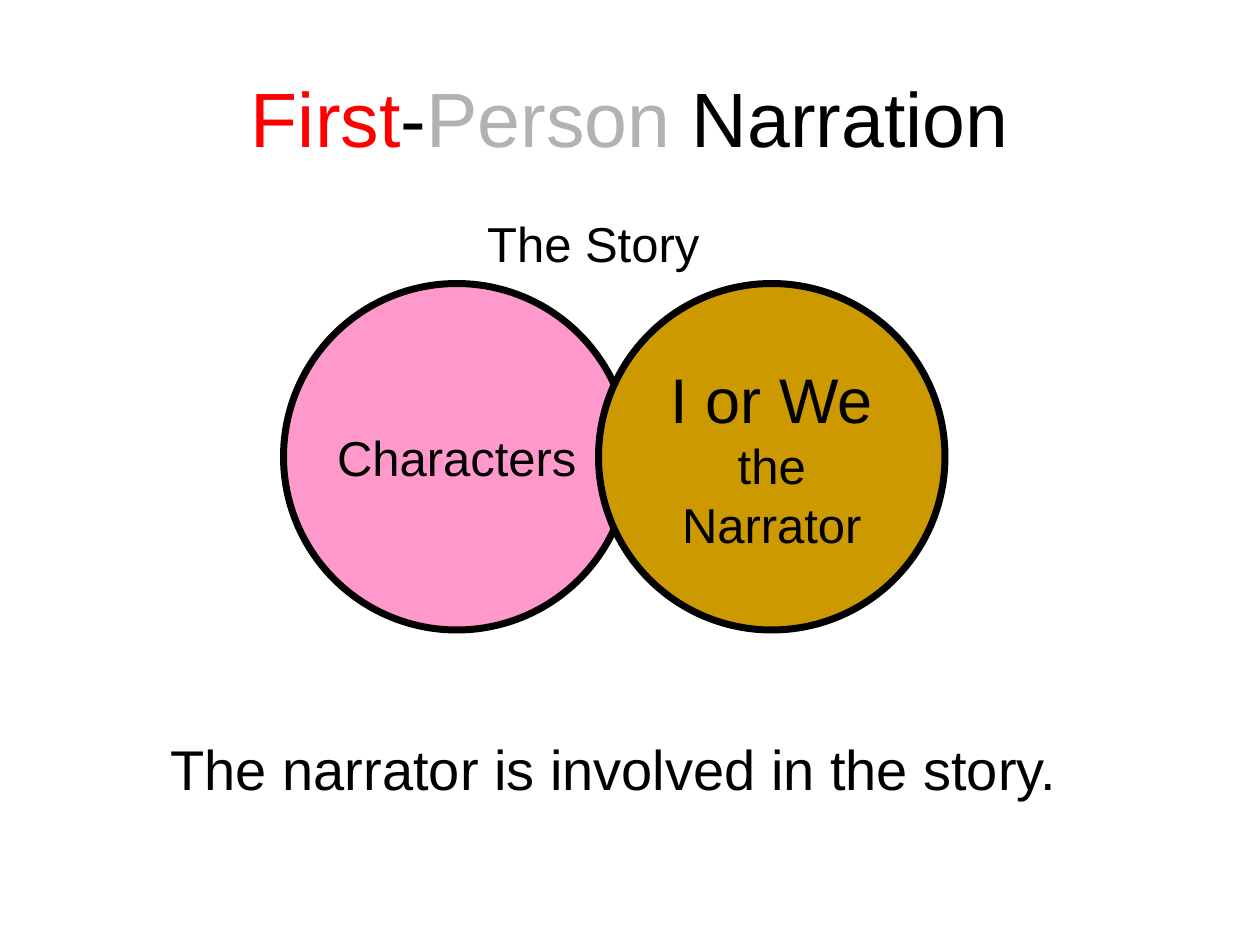
from pptx import Presentation
from pptx.dml.color import RGBColor
from pptx.enum.shapes import MSO_SHAPE
from pptx.enum.text import MSO_ANCHOR, PP_ALIGN
from pptx.util import Pt

BLACK = RGBColor(0x00, 0x00, 0x00)
RED = RGBColor(0xFF, 0x00, 0x00)
GRAY = RGBColor(0xB2, 0xB2, 0xB2)
PINK = RGBColor(0xFF, 0x99, 0xCC)
GOLD = RGBColor(0xCC, 0x99, 0x00)
FONT = "Arial"


def style_paragraph(paragraph, size):
    paragraph.alignment = PP_ALIGN.CENTER
    paragraph.font.name = FONT
    paragraph.font.size = Pt(size)
    paragraph.font.color.rgb = BLACK


def prepare_frame(frame, anchor, wrap=True):
    frame.word_wrap = wrap
    frame.vertical_anchor = anchor
    frame.margin_left = frame.margin_right = 0
    frame.margin_top = frame.margin_bottom = 0


def add_label(slide, box, text, size, anchor=MSO_ANCHOR.TOP):
    frame = slide.shapes.add_textbox(*map(Pt, box)).text_frame
    prepare_frame(frame, anchor)
    paragraph = frame.paragraphs[0]
    paragraph.text = text
    style_paragraph(paragraph, size)
    return paragraph


def add_title(slide, box, parts):
    title = add_label(slide, box, "", 44, MSO_ANCHOR.MIDDLE)
    for text, color in parts:
        run = title.add_run()
        run.text = text
        run.font.color.rgb = color


def add_circle(slide, left, top, diameter, fill, lines):
    circle = slide.shapes.add_shape(
        MSO_SHAPE.OVAL, Pt(left), Pt(top), Pt(diameter), Pt(diameter))
    circle.shadow.inherit = False
    circle.fill.solid()
    circle.fill.fore_color.rgb = fill
    circle.line.color.rgb = BLACK
    circle.line.width = Pt(4)
    frame = circle.text_frame
    prepare_frame(frame, MSO_ANCHOR.MIDDLE, wrap=False)
    frame.text = "\n".join(text for text, _ in lines)
    for paragraph, (_, size) in zip(frame.paragraphs, lines):
        style_paragraph(paragraph, size)


def add_story_diagram(slide, left, top):
    diameter, step, heading_height = 198, 180, 42
    add_label(slide, (left + 24, top, 306, heading_height - 4), "The Story", 28,
              MSO_ANCHOR.MIDDLE)
    circles = [
        (PINK, [("Characters", 28)]),
        (GOLD, [("I or We", 36), ("the", 28), ("Narrator", 28)]),
    ]
    for index, (fill, lines) in enumerate(circles):
        add_circle(slide, left + index * step, top + heading_height,
                   diameter, fill, lines)


def main():
    presentation = Presentation()
    presentation.slide_width = Pt(720)
    presentation.slide_height = Pt(540)
    slide = presentation.slides.add_slide(presentation.slide_layouts[6])
    add_title(slide, (36, 21.6, 648, 90), [
        ("First", RED), ("-", BLACK), ("Person", GRAY), (" Narration", BLACK)])
    add_label(slide, (42, 420, 618, 66), "The narrator is involved in the story.", 32)
    add_story_diagram(slide, 162, 120)
    presentation.save("out.pptx")


if __name__ == "__main__":
    main()
